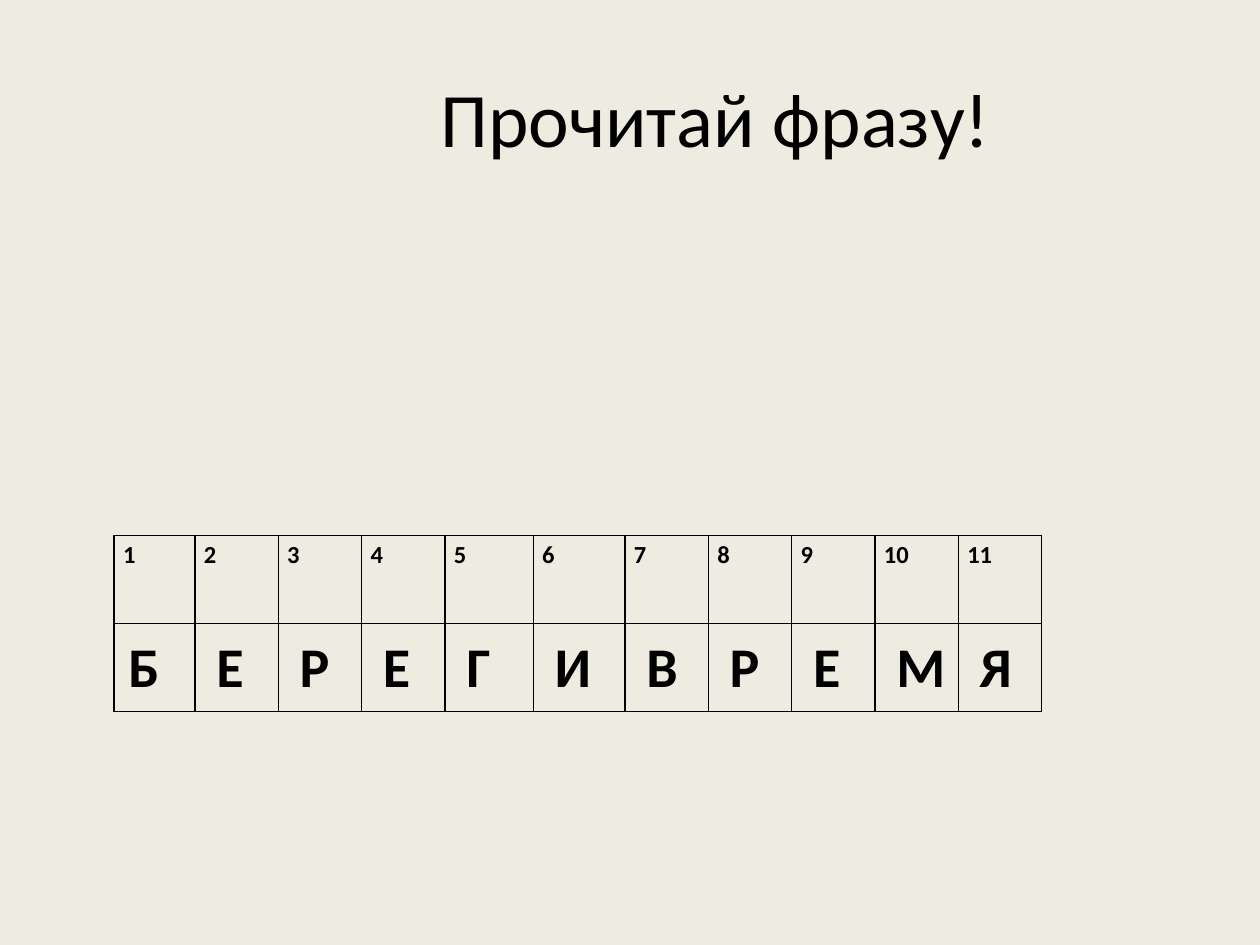
from lxml import etree
from pptx import Presentation
from pptx import util as u
from pptx.dml import color
from pptx.enum import text
from pptx.oxml import ns

LETTERS = "БЕРЕГИВРЕМЯ"
COL_WIDTHS = [1.63] + [1.68] * 3 + [1.78, 1.85] + [1.68] * 5
ROW_HEIGHT = 1.77


def rgb(value):
    return color.RGBColor.from_string(value)


class SlideBuilder:
    font = "Calibri"
    ink = "000000"
    paper = "EEECE1"

    def __init__(self, prs):
        self.s = prs.slides.add_slide(prs.slide_layouts[5])
        fill = self.s.background.fill
        fill.solid()
        fill.fore_color.rgb = rgb(self.paper)

    def run(self, p, content, size, bold=False):
        r = p.add_run()
        r.text = content
        r.font.name = self.font
        r.font.size = u.Pt(size)
        r.font.bold = bold
        r.font.color.rgb = rgb(self.ink)

    def title(self, content, left, top, width, height, indent):
        sp = self.s.shapes.title
        sp.left, sp.top = u.Cm(left), u.Cm(top)
        sp.width, sp.height = u.Cm(width), u.Cm(height)
        tf = sp.text_frame
        tf.margin_left = u.Cm(indent)
        tf.vertical_anchor = text.MSO_ANCHOR.MIDDLE
        p = tf.paragraphs[0]
        p.alignment = text.PP_ALIGN.CENTER
        self.run(p, content, 44)

    def table(self, rows, left, top, widths, row_height):
        frame = self.s.shapes.add_table(
            rows, len(widths), u.Cm(left), u.Cm(top),
            u.Cm(sum(widths)), u.Cm(rows * row_height))
        table = frame.table
        table.first_row = table.horz_banding = False
        for column, width in zip(table.columns, widths):
            column.width = u.Cm(width)
        for row in table.rows:
            row.height = u.Cm(row_height)
        return table

    def cell(self, cell, content, size, margin):
        cell.fill.background()
        cell.margin_left, cell.margin_right = u.Cm(margin), u.Cm(0.18)
        cell.margin_top = cell.margin_bottom = 0
        p = cell.text_frame.paragraphs[0]
        p.line_spacing = 1.15
        self.run(p, content, size, bold=True)
        self.borders(cell)

    def borders(self, cell):
        tc_pr = cell._tc.get_or_add_tcPr()
        for i, side in enumerate("LRTB"):
            ln = etree.Element(ns.qn(f"a:ln{side}"), w=str(u.Pt(1)))
            fill = etree.SubElement(ln, ns.qn("a:solidFill"))
            etree.SubElement(fill, ns.qn("a:srgbClr"), val=self.ink)
            tc_pr.insert(i, ln)


def main():
    prs = Presentation()
    prs.slide_width, prs.slide_height = u.Cm(25.4), u.Cm(19.05)
    slide = SlideBuilder(prs)

    # Title, set right of centre by its left inset
    slide.title("Прочитай фразу!", 1.27, 0.76, 22.86, 3.18, indent=3.71)

    # Numbered cells over the letters of the phrase
    table = slide.table(2, 2.3, 10.8, COL_WIDTHS, ROW_HEIGHT)
    for i, letter in enumerate(LETTERS):
        slide.cell(table.cell(0, i), str(i + 1), 14, margin=0.18)
        slide.cell(table.cell(1, i), letter, 32, margin=0.43 if i else 0.29)

    prs.save("out.pptx")


if __name__ == "__main__":
    main()
